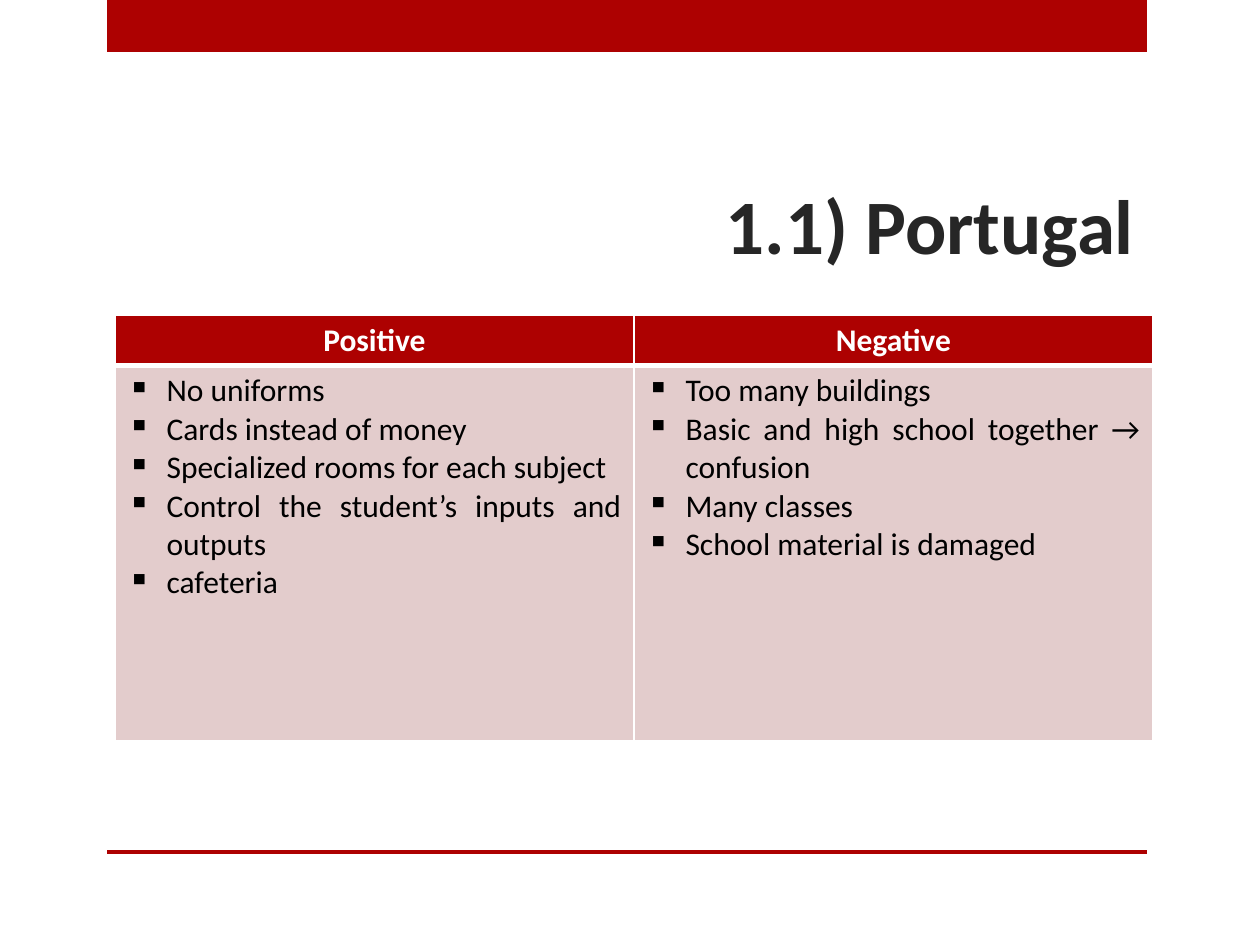
import dataclasses
import typing

import lxml.etree
import pptx
import pptx.dml.color
import pptx.enum.shapes
import pptx.enum.text
import pptx.oxml.ns
import pptx.util

PX = 914400 / 126  # EMU per px
FONT = "Calibri"
RED, PINK, WHITE, BLACK, DARK = "AD0101", "E3CCCC", "FFFFFF", "000000", "262626"
ALIGN = pptx.enum.text.PP_ALIGN


@dataclasses.dataclass(frozen=True)
class Box:
    x: int
    y: int
    w: int
    h: int

    def emu(self) -> tuple[int, ...]:
        return tuple(px(v) for v in (self.x, self.y, self.w, self.h))


@dataclasses.dataclass(frozen=True)
class Column:
    heading: str
    points: tuple[str, ...]


BARS = (Box(107, 0, 1040, 52), Box(107, 850, 1040, 4))
TITLE = Box(105, 55, 1042, 221)
TABLE = Box(115, 315, 1038, 425)
HEADER_HEIGHT = 50
INDENT = 39
COLUMNS = (
    Column("Positive", (
        "No uniforms",
        "Cards instead of money",
        "Specialized rooms for each subject",
        "Control the student’s inputs and outputs",
        "cafeteria",
    )),
    Column("Negative", (
        "Too many buildings",
        "Basic and high school together → confusion",
        "Many classes",
        "School material is damaged",
    )),
)


def px(value: float) -> int:
    return round(value * PX)


def rgb(value: str) -> pptx.dml.color.RGBColor:
    return pptx.dml.color.RGBColor.from_string(value)


def add_run(p, text: str, size: int, color: str, bold: bool = False) -> None:
    r = p.add_run()
    r.text = text
    r.font.name = FONT
    r.font.size = pptx.util.Pt(size)
    r.font.bold = bold
    r.font.color.rgb = rgb(color)


def add_bar(s, box: Box) -> None:
    sp = s.shapes.add_shape(pptx.enum.shapes.MSO_SHAPE.RECTANGLE, *box.emu())
    sp.shadow.inherit = False
    sp.fill.solid()
    sp.fill.fore_color.rgb = rgb(RED)
    sp.line.fill.background()


def add_title(s, box: Box, text: str) -> None:
    tf = s.shapes.add_textbox(*box.emu()).text_frame
    tf.word_wrap = True
    tf.vertical_anchor = pptx.enum.text.MSO_ANCHOR.BOTTOM
    p = tf.paragraphs[0]
    p.alignment = ALIGN.RIGHT
    add_run(p, text, 44, DARK, bold=True)


def add_bullet(p) -> None:
    pPr = p._p.get_or_add_pPr()
    pPr.set("marL", str(px(INDENT)))
    pPr.set("indent", str(-px(INDENT)))
    bullet = lxml.etree.SubElement(pPr, pptx.oxml.ns.qn("a:buChar"))
    bullet.set("char", "▪")


def style_cell(cell, fill: str, borders: typing.Mapping[str, int]) -> None:
    """Fill the cell and draw white borders, given as side letter to points."""
    cell.fill.solid()
    cell.fill.fore_color.rgb = rgb(fill)
    tcPr = cell._tc.get_or_add_tcPr()
    for i, side in enumerate("LRTB"):
        ln = lxml.etree.Element(pptx.oxml.ns.qn(f"a:ln{side}"))
        ln.set("w", str(pptx.util.Pt(borders[side])))
        solid = lxml.etree.SubElement(ln, pptx.oxml.ns.qn("a:solidFill"))
        lxml.etree.SubElement(solid, pptx.oxml.ns.qn("a:srgbClr")).set("val", WHITE)
        tcPr.insert(i, ln)


def add_comparison(s, box: Box, columns: typing.Sequence[Column]) -> None:
    table = s.shapes.add_table(2, len(columns), *box.emu()).table
    table.horz_banding = False
    table.rows[0].height = px(HEADER_HEIGHT)
    table.rows[1].height = px(box.h - HEADER_HEIGHT)
    for i, column in enumerate(columns):
        table.columns[i].width = px(box.w / len(columns))
        header, body = table.cell(0, i), table.cell(1, i)
        style_cell(header, RED, {"L": 1, "R": 1, "T": 1, "B": 3})
        style_cell(body, PINK, {"L": 1, "R": 1, "T": 3, "B": 1})
        p = header.text_frame.paragraphs[0]
        p.alignment = ALIGN.CENTER
        add_run(p, column.heading, 18, WHITE, bold=True)
        tf = body.text_frame
        for j, point in enumerate(column.points):
            p = tf.add_paragraph() if j else tf.paragraphs[0]
            p.alignment = ALIGN.JUSTIFY
            add_bullet(p)
            add_run(p, point, 18, BLACK)


def main() -> None:
    prs = pptx.Presentation()
    prs.slide_width, prs.slide_height = px(1260), px(945)
    s = prs.slides.add_slide(prs.slide_layouts[6])
    for bar in BARS:
        add_bar(s, bar)
    add_title(s, TITLE, "1.1) Portugal")
    add_comparison(s, TABLE, COLUMNS)
    prs.save("out.pptx")


if __name__ == "__main__":
    main()
